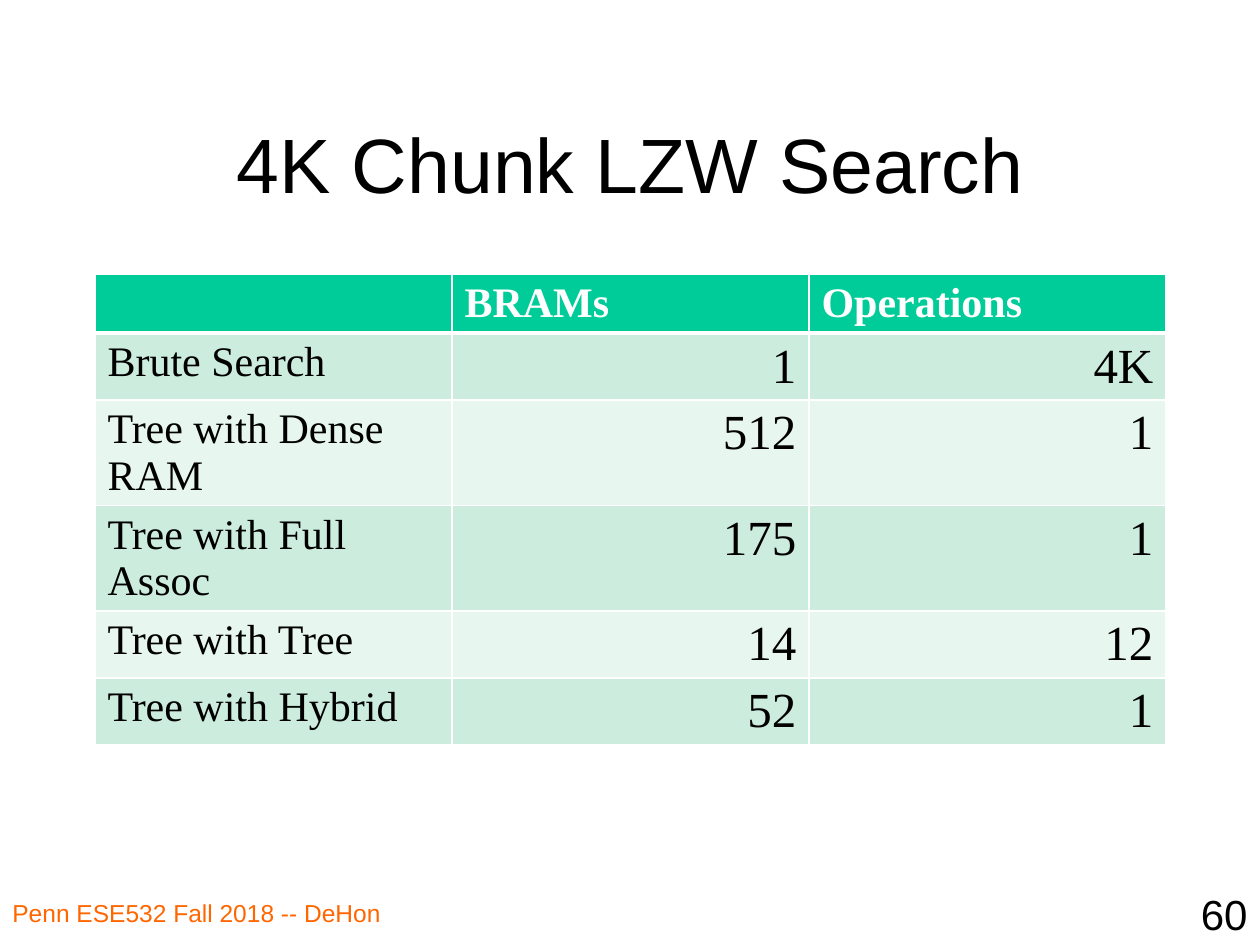
from lxml.etree import SubElement
from pptx import Presentation
from pptx.dml.color import RGBColor
from pptx.enum.text import MSO_ANCHOR, PP_ALIGN
from pptx.oxml.ns import qn
from pptx.util import Emu, Pt

PX = 914400 / 126
TITLE = "4K Chunk LZW Search"
ROWS = [
    ("", "BRAMs", "Operations"),
    ("Brute Search", "1", "4K"),
    ("Tree with Dense RAM", "512", "1"),
    ("Tree with Full Assoc", "175", "1"),
    ("Tree with Tree", "14", "12"),
    ("Tree with Hybrid", "52", "1"),
]
FOOTERS = [
    # text, box in px, size, colour, alignment
    ("Penn ESE532 Fall 2018 -- DeHon", (0, 892, 483, 53), 14, "FF6600", PP_ALIGN.LEFT),
    ("60", (998, 882, 262, 63), 24, "000000", PP_ALIGN.RIGHT),
]
HEADER_FILL = "00CC99"
BAND_FILLS = ("E7F6EF", "CCECDE")
TABLE_LEFT, TABLE_TOP = 95, 274
COLUMN_WIDTH, ROW_HEIGHT = 357, 51


def px(*lengths):
    return [Emu(round(length * PX)) for length in lengths]


def rgb(colour):
    return RGBColor.from_string(colour)


def write(frame, text, size, colour, align, font="Arial", bold=False):
    frame.text = text
    para = frame.paragraphs[0]
    para.alignment = align
    for span in para.runs:
        span.font.name = font
        span.font.size = Pt(size)
        span.font.bold = bold
        span.font.color.rgb = rgb(colour)


def add_borders(cell, widths):
    """Draw white borders; widths in points for left, right, top, bottom."""
    properties = cell._tc.get_or_add_tcPr()
    for side, width in zip("LRTB", widths):
        line = SubElement(properties, qn(f"a:ln{side}"), w=str(Pt(width)))
        fill = SubElement(line, qn("a:solidFill"))
        SubElement(fill, qn("a:srgbClr"), val="FFFFFF")


def add_results(page):
    columns = len(ROWS[0])
    area = px(TABLE_LEFT, TABLE_TOP, COLUMN_WIDTH * columns, ROW_HEIGHT * len(ROWS))
    table = page.shapes.add_table(len(ROWS), columns, *area).table
    for r, row in enumerate(ROWS):
        header = r == 0
        for c, text in enumerate(row):
            cell = table.cell(r, c)
            number = not header and c > 0
            write(cell.text_frame, text, 28 if number else 24,
                  "FFFFFF" if header else "000000",
                  PP_ALIGN.RIGHT if number else PP_ALIGN.LEFT,
                  "Times New Roman", header)
            add_borders(cell, (1, 1, 3 if r == 1 else 1, 3 if header else 1))
            cell.fill.solid()
            cell.fill.fore_color.rgb = rgb(HEADER_FILL if header else BAND_FILLS[r % 2])


def main():
    deck = Presentation()
    deck.slide_width, deck.slide_height = px(1260, 945)
    page = deck.slides.add_slide(deck.slide_layouts[5])

    title = page.shapes.title
    title.left, title.top, title.width, title.height = px(95, 84, 1071, 158)
    title.text_frame.vertical_anchor = MSO_ANCHOR.MIDDLE
    write(title.text_frame, TITLE, 44, "000000", PP_ALIGN.CENTER)

    add_results(page)

    for text, area, size, colour, align in FOOTERS:
        box = page.shapes.add_textbox(*px(*area))
        box.text_frame.word_wrap = True
        write(box.text_frame, text, size, colour, align)

    deck.save("out.pptx")


if __name__ == "__main__":
    main()
